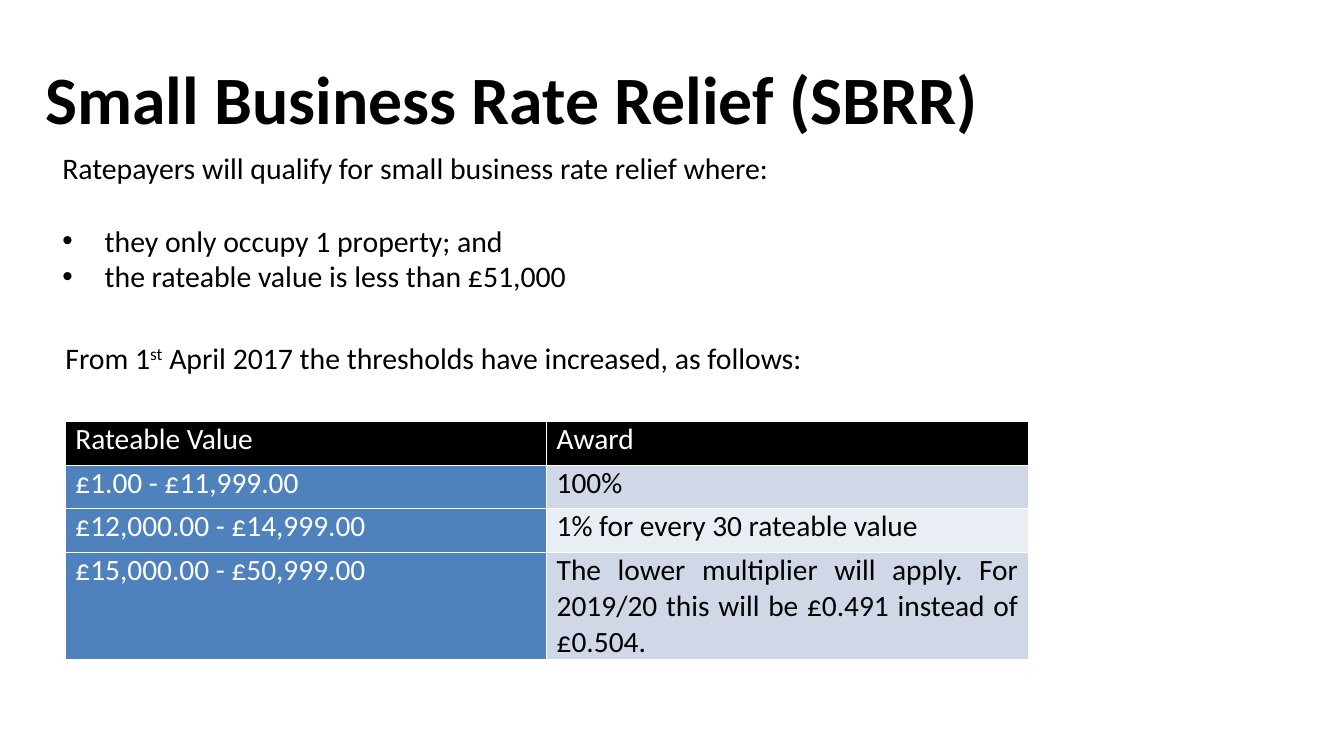
from pptx import Presentation
from pptx import util as u
from pptx.dml.color import RGBColor
from pptx.enum import text
from pptx.oxml import parse_xml
from pptx.oxml.ns import nsdecls

COLOURS = {"ink": "000000", "paper": "FFFFFF", "label": "4F81BD",
           "band": "D0D8E8", "light": "E9EDF4"}


class SlideBuilder:
    """Holds the text style and the current page."""

    def __init__(self, deck, font="Calibri", size=21.3):
        self.font, self.size = font, size
        self.page = deck.slides.add_slide(deck.slide_layouts[5])

    def set_all(self, target, values):
        """Set each named attribute on the target."""
        for name, value in values.items():
            setattr(target, name, value)

    def place(self, shape, left, top, width, height):
        """Move and size a shape, in centimetres."""
        sides = {"left": left, "top": top, "width": width, "height": height}
        self.set_all(shape, {name: u.Cm(value) for name, value in sides.items()})

    def add_span(self, para, words, colour="ink", size=None, bold=False, raised=False):
        """Add one styled span to a paragraph."""
        span = para.add_run()
        span.text = words
        self.set_all(span.font, {"name": self.font, "size": u.Pt(size or self.size), "bold": bold})
        span.font.color.rgb = RGBColor.from_string(COLOURS[colour])
        if raised:
            span._r.get_or_add_rPr().set("baseline", "30000")

    def title(self, words, *place):
        """Fill and format the title placeholder."""
        box = self.page.shapes.title
        self.place(box, *place)
        self.set_all(box.text_frame, {"vertical_anchor": text.MSO_ANCHOR.MIDDLE,
                                      "word_wrap": True, "auto_size": text.MSO_AUTO_SIZE.NONE})
        para = box.text_frame.paragraphs[0]
        para.alignment = text.PP_ALIGN.LEFT
        self.add_span(para, words, size=48.4, bold=True)

    def text_box(self, *place, **frame_format):
        """Add a text box and return its frame."""
        box = self.page.shapes.add_textbox(*map(u.Cm, place))
        self.set_all(box.text_frame, {"word_wrap": True, **frame_format})
        return box.text_frame

    def bullet(self, frame, words, space_before=0):
        """Add a bulleted paragraph with a hanging indent."""
        para = frame.add_paragraph()
        para.space_before = u.Pt(space_before)
        properties = para._p.get_or_add_pPr()
        properties.set("marL", str(u.Cm(1.07)))
        properties.set("indent", str(u.Cm(-1.07)))
        properties.append(parse_xml(f'<a:buFont {nsdecls("a")} typeface="Arial"/>'))
        properties.append(parse_xml(f'<a:buChar {nsdecls("a")} char="•"/>'))
        self.add_span(para, words)

    def cell(self, cell, words, fill, colour):
        """Fill one table cell and draw its white borders."""
        self.set_all(cell, {"margin_left": u.Cm(0.25), "margin_right": u.Cm(0.25),
                            "margin_top": 0, "margin_bottom": 0})
        for side in ("lnL", "lnR", "lnT", "lnB"):
            cell._tc.get_or_add_tcPr().append(parse_xml(
                f'<a:{side} {nsdecls("a")} w="{u.Pt(1)}"><a:solidFill>'
                f'<a:srgbClr val="{COLOURS["paper"]}"/></a:solidFill></a:{side}>'))
        cell.fill.solid()
        cell.fill.fore_color.rgb = RGBColor.from_string(COLOURS[fill])
        para = cell.text_frame.paragraphs[0]
        para.alignment = text.PP_ALIGN.JUSTIFY
        self.add_span(para, words, colour, size=21)

    def table(self, rows, left, top, column_width, heights):
        """Add a two-column table with a header and banded rows."""
        frame = self.page.shapes.add_table(len(rows), 2, u.Cm(left), u.Cm(top),
                                           u.Cm(2 * column_width), u.Cm(sum(heights)))
        table = frame.table
        self.set_all(table, {"first_row": False, "horz_banding": False})
        for column in table.columns:
            column.width = u.Cm(column_width)
        for index, (label, award) in enumerate(rows):
            table.rows[index].height = u.Cm(heights[index])
            header = index == 0
            band = "band" if index % 2 else "light"
            self.cell(table.cell(index, 0), label, "ink" if header else "label", "paper")
            self.cell(table.cell(index, 1), award, "ink" if header else band,
                      "paper" if header else "ink")


def main():
    """Build the rate relief slide."""
    deck = Presentation()
    deck.slide_width, deck.slide_height = u.Cm(33.87), u.Cm(19.05)
    slide = SlideBuilder(deck)
    slide.title("Small Business Rate Relief (SBRR)", 0.89, 1.27, 24.74, 2.36)

    conditions = slide.text_box(1.32, 3.66, 21.44, 5.72)
    slide.add_span(conditions.paragraphs[0],
                   "Ratepayers will qualify for small business rate relief where:")
    slide.bullet(conditions, "they only occupy 1 property; and", space_before=26)
    slide.bullet(conditions, "the rateable value is less than £51,000")

    slide.table([("Rateable Value", "Award"),
                 ("£1.00 - £11,999.00", "100%"),
                 ("£12,000.00 - £14,999.00", "1% for every 30 rateable value"),
                 ("£15,000.00 - £50,999.00", "The lower multiplier will apply. For 2019/20 "
                  "this will be £0.491 instead of £0.504.")],
                1.65, 10.62, 12.13, [1.1, 1.1, 1.1, 2.71])

    thresholds = slide.text_box(1.32, 8.38, 19.56, 2.16, word_wrap=False,
                                margin_left=u.Cm(0.33), margin_right=u.Cm(0.33),
                                margin_top=u.Cm(0.18), margin_bottom=u.Cm(0.18))
    para = thresholds.paragraphs[0]
    slide.add_span(para, "From 1")
    slide.add_span(para, "st", raised=True)
    slide.add_span(para, " April 2017 the thresholds have increased, as follows:")
    deck.save("out.pptx")


if __name__ == "__main__":
    main()
